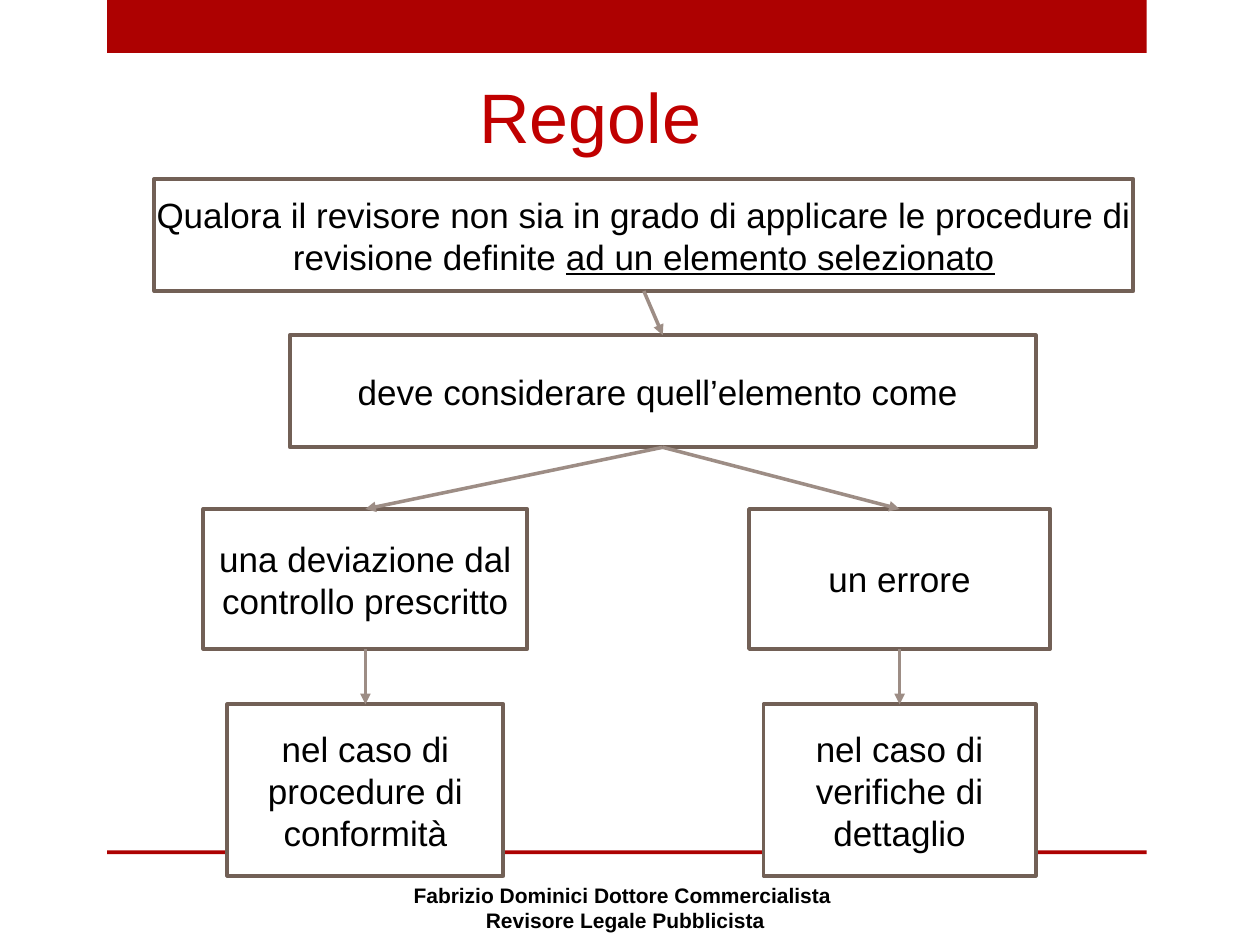
"""Build the "Regole" slide: a decision flow of boxes and arrows."""
from dataclasses import dataclass

from lxml.etree import SubElement
from pptx import Presentation
from pptx.dml.color import RGBColor as RGB
from pptx.enum.shapes import MSO_CONNECTOR as CONN, MSO_SHAPE as SHAPE
from pptx.enum.text import MSO_ANCHOR as ANCHOR, PP_ALIGN as ALIGN
from pptx.oxml.ns import qn
from pptx.util import Inches, Pt


@dataclass(frozen=True)
class Theme:
    font: str = "Arial"
    band: str = "AD0101"
    title: str = "C00000"
    text: str = "000000"
    box: str = "FFFFFF"
    border: str = "726056"
    arrow: str = "9D8D85"
    title_size: int = 40
    box_size: int = 20
    footer_size: int = 12
    border_width: float = 2.25


T = Theme()
TITLE = "Regole"
FOOTER = ["Fabrizio Dominici Dottore Commercialista", " Revisore Legale Pubblicista"]
BANDS = [(0, 0.42), (6.75, 0.03)]
COLS = {"left": 2.9, "top": 5.11, "middle": 5.26, "right": 7.14}
ROWS = [(1.42, 0.89), (2.66, 0.89), (4.04, 1.11), (5.59, 1.36)]
BOXES = {
    "deviation": ("left", 2, 2.57, ["una deviazione dal controllo prescritto"]),
    "error": ("right", 2, 2.39, ["un errore"]),
    "compliance": ("left", 3, 2.19, ["nel caso di procedure di conformità"]),
    "detail": ("right", 3, 2.16, ["nel caso di verifiche di dettaglio"]),
    "premise": ("top", 0, 7.77, [
        "Qualora il revisore non sia in grado di applicare le procedure di revisione definite ",
        "ad un elemento selezionato"]),
    "rule": ("middle", 1, 5.92, ["deve considerare quell’elemento come "]),
}
ARROWS = [("deviation", "compliance"), ("error", "detail"), ("premise", "rule"),
          ("rule", "deviation"), ("rule", "error")]
BOTTOM, TOP = 2, 0


def style(tf, size, color, anchor, bold=False):
    tf.word_wrap = True
    tf.vertical_anchor = anchor
    for p in tf.paragraphs:
        p.alignment = ALIGN.CENTER
        for r in p.runs:
            r.font.name, r.font.size, r.font.bold = T.font, Pt(size), bold
            r.font.color.rgb = RGB.from_string(color)


def add_rect(s, x, y, w, h, fill, border=None):
    sp = s.shapes.add_shape(SHAPE.RECTANGLE, *map(Inches, (x, y, w, h)))
    sp.shadow.inherit = False
    sp.fill.solid()
    sp.fill.fore_color.rgb = RGB.from_string(fill)
    if border:
        sp.line.color.rgb = RGB.from_string(border)
        sp.line.width = Pt(T.border_width)
    else:
        sp.line.fill.background()
    return sp


def add_box(s, col, row, width, parts):
    top, height = ROWS[row]
    sp = add_rect(s, COLS[col] - width / 2, top, width, height, T.box, T.border)
    tf = sp.text_frame
    tf.margin_left = tf.margin_right = tf.margin_top = tf.margin_bottom = 0
    for i, part in enumerate(parts):
        r = tf.paragraphs[0].add_run()
        r.text = part
        r.font.underline = i > 0
    style(tf, T.box_size, T.text, ANCHOR.MIDDLE)
    return sp


def add_arrow(s, start, end):
    line = s.shapes.add_connector(CONN.STRAIGHT, 0, 0, 0, 0)
    line.begin_connect(start, BOTTOM)
    line.end_connect(end, TOP)
    line.line.color.rgb = RGB.from_string(T.arrow)
    line.line.width = Pt(0)
    SubElement(line.line._get_or_add_ln(), qn("a:tailEnd"), type="triangle")
    SubElement(line._element.spPr, qn("a:effectLst"))


def main():
    prs = Presentation()
    prs.slide_width, prs.slide_height = Inches(10), Inches(7.5)
    s = prs.slides.add_slide(prs.slide_layouts[5])

    for top, height in BANDS:
        add_rect(s, 0.85, top, 8.25, height, T.band)

    title = s.shapes.title
    title.left, title.top, title.width, title.height = map(Inches, (0, 0.24, 9.37, 1.06))
    title.text_frame.text = TITLE
    style(title.text_frame, T.title_size, T.title, ANCHOR.BOTTOM)

    footer = s.shapes.add_textbox(*map(Inches, (3.13, 6.96, 3.62, 0.49)))
    footer.text_frame.text = "\n".join(FOOTER)
    style(footer.text_frame, T.footer_size, T.text, ANCHOR.MIDDLE, bold=True)

    boxes = {name: add_box(s, *box) for name, box in BOXES.items()}
    for start, end in ARROWS:
        add_arrow(s, boxes[start], boxes[end])

    prs.save("out.pptx")


if __name__ == "__main__":
    main()
